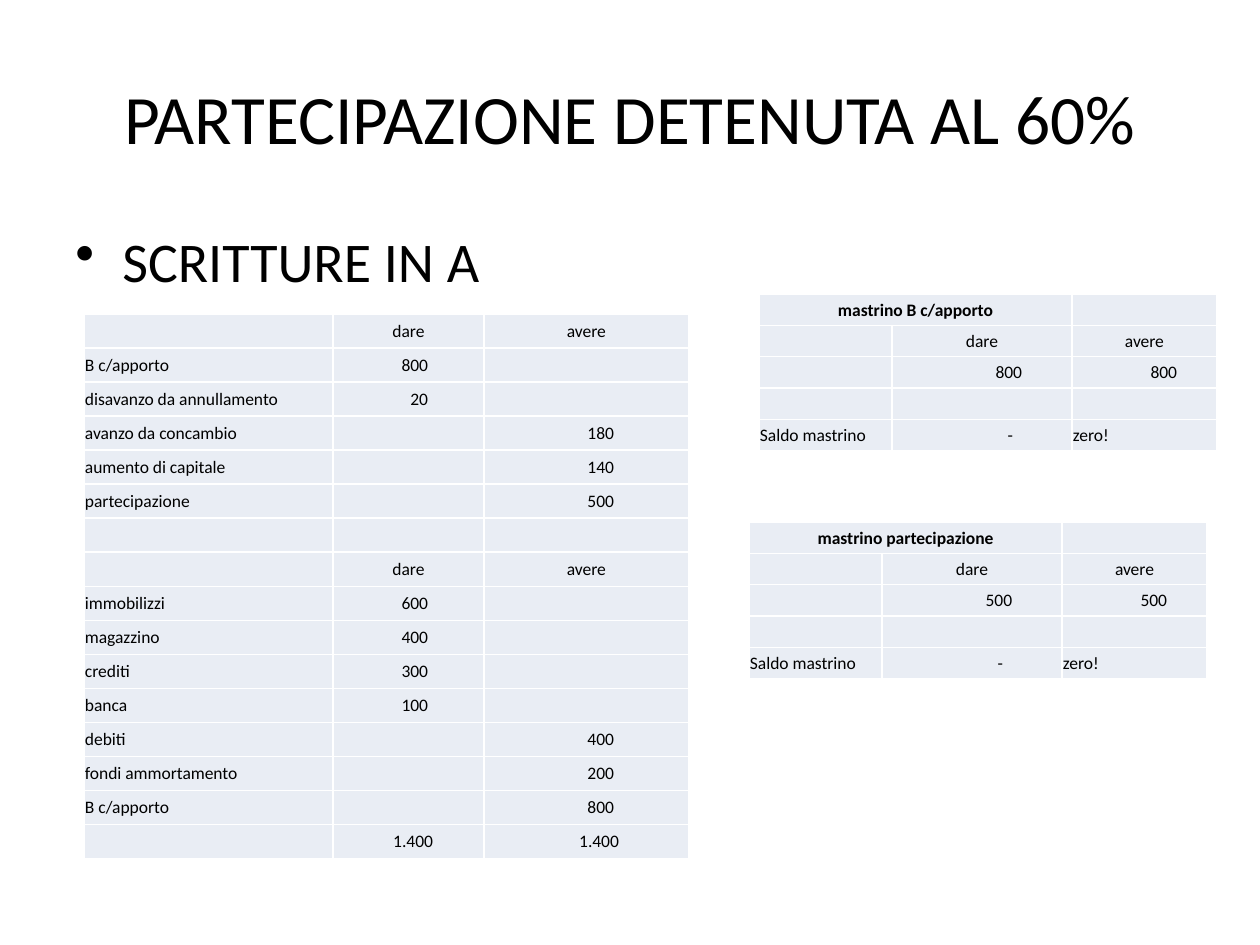
from dataclasses import dataclass

from pptx import Presentation
from pptx import util as u
from pptx.dml.color import RGBColor
from pptx.enum import text
from pptx.oxml.ns import qn
from lxml import etree


@dataclass(frozen=True)
class Theme:
    font: str = "Calibri"
    ink: RGBColor = RGBColor(0, 0, 0)
    cell: RGBColor = RGBColor(0xE9, 0xED, 0xF4)
    border: str = "FFFFFF"
    title_size: float = 39.6
    heading_size: float = 32
    table_size: float = 10


THEME = Theme()
HEADER = ("", "dare", "avere")
JOURNAL = [
    HEADER,
    ("B c/apporto", "800", ""),
    ("disavanzo da annullamento", "20", ""),
    ("avanzo da concambio", "", "180"),
    ("aumento di capitale", "", "140"),
    ("partecipazione", "", "500"),
    ("", "", ""),
    HEADER,
    ("immobilizzi", "600", ""),
    ("magazzino", "400", ""),
    ("crediti", "300", ""),
    ("banca", "100", ""),
    ("debiti", "", "400"),
    ("fondi ammortamento", "", "200"),
    ("B c/apporto", "", "800"),
    ("", "1.400", "1.400"),
]


def px(length):
    return u.Emu(round(length * 914400 / 126))


def format_paragraph(paragraph, size, align, bold=False):
    paragraph.alignment = align
    font = paragraph.font
    font.name, font.size, font.bold = THEME.font, u.Pt(size), bold
    font.color.rgb = THEME.ink


def add_title(slide, wording):
    title = slide.shapes.title
    title.left, title.top, title.width, title.height = map(px, (63, 38, 1134, 157))
    title.text_frame.text = wording
    title.text_frame.vertical_anchor = text.MSO_ANCHOR.MIDDLE
    format_paragraph(title.text_frame.paragraphs[0], THEME.title_size, text.PP_ALIGN.CENTER)


def add_bullet(slide, wording):
    frame = slide.shapes.add_textbox(*map(px, (63, 220, 1134, 624))).text_frame
    frame.word_wrap = True
    frame.text = wording
    heading = frame.paragraphs[0]
    format_paragraph(heading, THEME.heading_size, text.PP_ALIGN.LEFT)
    heading.space_before = u.Pt(THEME.heading_size * 0.2)
    properties = heading._p.get_or_add_pPr()
    properties.set("marL", str(px(47)))
    properties.set("indent", str(-px(47)))
    bullet = etree.Element(qn("a:buChar"), char="•")
    properties.find(qn("a:defRPr")).addprevious(bullet)


def add_borders(cell):
    properties = cell._tc.get_or_add_tcPr()
    for position, side in enumerate(("lnL", "lnR", "lnT", "lnB")):
        line = etree.Element(qn(f"a:{side}"), w=str(u.Pt(1)))
        fill = etree.SubElement(line, qn("a:solidFill"))
        etree.SubElement(fill, qn("a:srgbClr"), val=THEME.border)
        properties.insert(position, line)


def fill_cell(cell, wording, number_inset, is_title):
    is_number = wording == "-" or wording.replace(".", "").isdigit()
    cell.fill.solid()
    cell.fill.fore_color.rgb = THEME.cell
    add_borders(cell)
    cell.vertical_anchor = text.MSO_ANCHOR.MIDDLE
    cell.margin_left = cell.margin_top = px(1)
    cell.margin_right = px(number_inset if is_number else 1)
    cell.margin_bottom = 0
    cell.text = wording
    if is_number:
        align = text.PP_ALIGN.RIGHT
    elif is_title or wording in HEADER:
        align = text.PP_ALIGN.CENTER
    else:
        align = text.PP_ALIGN.LEFT
    format_paragraph(cell.text_frame.paragraphs[0], THEME.table_size, align, is_title)


def add_ledger(slide, left, top, height, widths, rows, insets, special_shift, titled=False):
    frame = slide.shapes.add_table(
        len(rows), len(widths), px(left), px(top), px(sum(widths)), px(height))
    table = frame.table
    table.first_row = table.horz_banding = False
    for column, width in zip(table.columns, widths):
        column.width = px(width)
    for row_index, row in enumerate(rows):
        table.rows[row_index].height = px(height / len(rows))
        for column_index, wording in enumerate(row):
            inset = insets[column_index] + special_shift.get(wording, 0)
            is_title = titled and row_index == 0 and column_index == 0
            fill_cell(table.cell(row_index, column_index), wording, inset, is_title)
    if titled:
        table.cell(0, 0).merge(table.cell(0, 1))


def add_account(slide, left, top, name, amount):
    rows = [
        (f"mastrino {name}", "", ""),
        HEADER,
        ("", amount, amount),
        ("", "", ""),
        ("Saldo mastrino", "-", "zero!"),
    ]
    add_ledger(slide, left, top, 157, (133, 180, 145), rows, (1, 50, 40), {"-": 9}, titled=True)


def main():
    deck = Presentation()
    deck.slide_width, deck.slide_height = px(1260), px(945)
    slide = deck.slides.add_slide(deck.slide_layouts[5])
    add_title(slide, "PARTECIPAZIONE DETENUTA AL 60%")
    add_bullet(slide, "SCRITTURE IN A")
    add_ledger(slide, 84, 314, 545, (249, 151, 205), JOURNAL, (1, 56, 75), {"1.400": -5})
    add_account(slide, 759, 294, "B c/apporto", "800")
    add_account(slide, 749, 522, "partecipazione", "500")
    deck.save("out.pptx")


if __name__ == "__main__":
    main()
